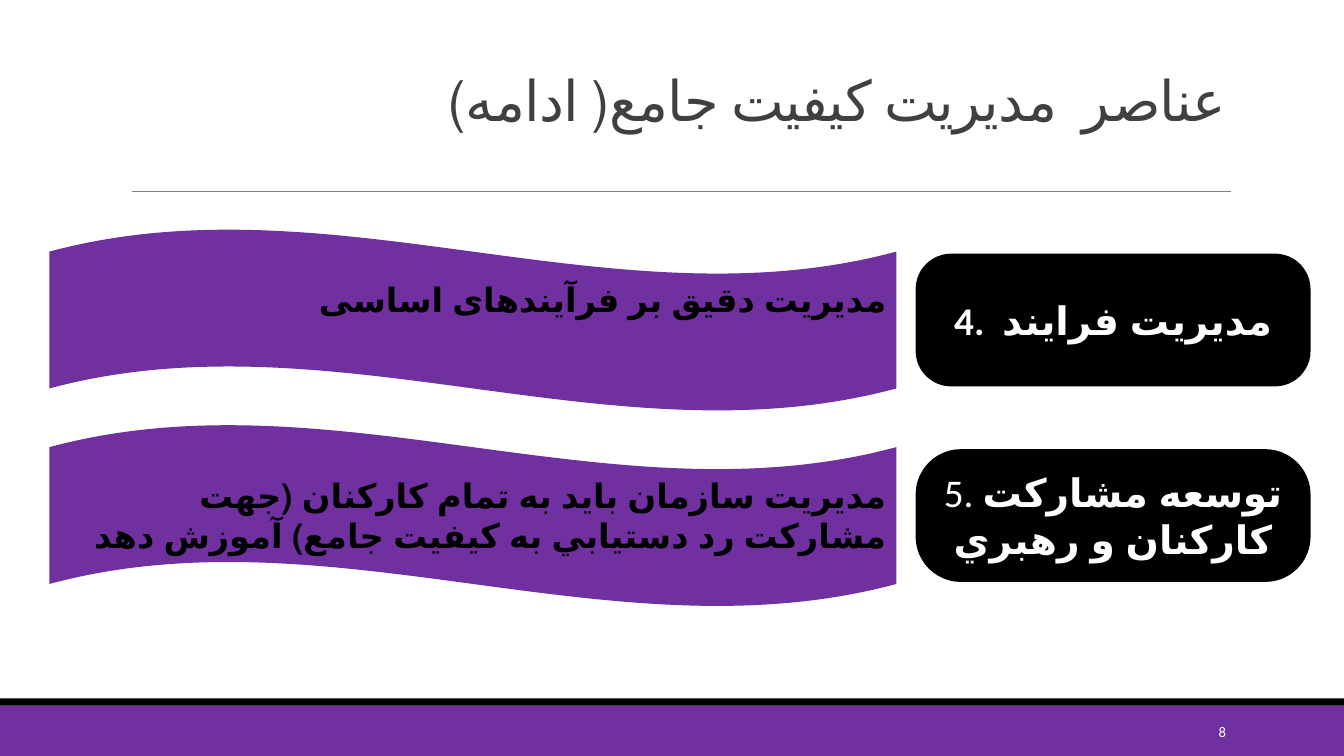
from lxml import etree
from pptx import Presentation
from pptx.dml.color import RGBColor
from pptx.enum.lang import MSO_LANGUAGE_ID
from pptx.enum.shapes import MSO_CONNECTOR, MSO_SHAPE
from pptx.enum.text import MSO_ANCHOR, MSO_AUTO_SIZE, PP_ALIGN
from pptx.oxml.ns import qn
from pptx.util import Inches, Pt

RECT, ROUND, WAVE = MSO_SHAPE.RECTANGLE, MSO_SHAPE.ROUNDED_RECTANGLE, MSO_SHAPE.WAVE
TOP, MIDDLE, BOTTOM = MSO_ANCHOR.TOP, MSO_ANCHOR.MIDDLE, MSO_ANCHOR.BOTTOM
CENTER, RIGHT = PP_ALIGN.CENTER, PP_ALIGN.RIGHT
PERSIAN = MSO_LANGUAGE_ID.FARSI

TITLE = "عناصر  مدیریت کیفیت جامع( ادامه)"
ROWS = [
    {"label": [("4.  مديريت فرايند", True)], "anchor": MIDDLE, "corner": 0.265,
     "detail": "مدیریت دقیق بر فرآیندهای اساسی"},
    {"label": [("5. ", False), ("توسعه مشاركت كاركنان و رهبري", True)],
     "anchor": TOP, "corner": 0.339,
     "detail": "مديريت سازمان بايد به تمام كاركنان (جهت مشاركت رد دستيابي "
               "به كيفيت جامع) آموزش دهد"},
]
PAGE = "8"
COLORS = {"purple": "7030A0", "black": "000000", "white": "FFFFFF",
          "title": "404040", "rule": "808080"}
FONT = "Calibri"
W, H = 13.33, 7.5
BAND, STRIPE = 0.5, 0.07
ROW_TOP, ROW_PITCH = 2.27, 1.94
WAVE_LEFT, WAVE_W, WAVE_H = 0.49, 8.4, 1.81
LABEL_LEFT, LABEL_W, LABEL_H = 9.09, 3.9, 1.3


def color(name):
    return RGBColor.from_string(COLORS[name])


def write(tf, runs, size, name, align, anchor):
    tf.word_wrap = True
    tf.auto_size = MSO_AUTO_SIZE.NONE
    tf.vertical_anchor = anchor
    p = tf.paragraphs[0]
    p.alignment = align
    for text, bold in runs:
        r = p.add_run()
        r.text = text
        r.font.name, r.font.size, r.font.bold = FONT, Pt(size), bold
        r.font.color.rgb = color(name)
        r.font.language_id = PERSIAN
    return p


def block(s, kind, box, fill, line=None):
    sp = s.shapes.add_shape(kind, *map(Inches, box))
    sp.shadow.inherit = False
    sp.fill.solid()
    sp.fill.fore_color.rgb = color(fill)
    if line:
        sp.line.color.rgb = color(fill)
        sp.line.width = Pt(line)
    else:
        sp.line.fill.background()
    return sp


def place(sp, left, top, width, height):
    sp.left, sp.top, sp.width, sp.height = map(Inches, (left, top, width, height))


def add_frame(s):
    block(s, RECT, (0, H - BAND, W, BAND), "purple")
    block(s, RECT, (0, H - BAND - STRIPE, W, STRIPE), "black")
    rule = s.shapes.add_connector(MSO_CONNECTOR.STRAIGHT, Inches(1.31), Inches(1.9),
                                  Inches(12.21), Inches(1.9))
    rule.line.color.rgb = color("rule")
    rule.line.width = Pt(0.5)
    etree.SubElement(rule._element.spPr, qn("a:effectLst"))


def add_title(s):
    title = s.shapes.title
    place(title, 3.95, 0.18, 8.31, 1.19)
    p = write(title.text_frame, [(TITLE, False)], 40, "title", RIGHT, BOTTOM)
    p.line_spacing = 0.85
    p._p.get_or_add_pPr().set("rtl", "1")
    p.runs[0].font._element.set("spc", "-50")


def add_row(s, i, row):
    top = ROW_TOP + i * ROW_PITCH
    label_top = top + (WAVE_H - LABEL_H) / 2
    label = block(s, ROUND, (LABEL_LEFT, label_top, LABEL_W, LABEL_H), "black", 1.25)
    label.adjustments[0] = row["corner"]
    write(label.text_frame, row["label"], 28, "white", CENTER, row["anchor"])
    wave = block(s, WAVE, (WAVE_LEFT, top, WAVE_W, WAVE_H), "purple")
    write(wave.text_frame, [(row["detail"], True)], 24, "black", RIGHT, TOP)


def main():
    prs = Presentation()
    prs.slide_width, prs.slide_height = Inches(W), Inches(H)
    s = prs.slides.add_slide(prs.slide_layouts[5])
    add_frame(s)
    add_title(s)
    number = s.shapes.add_textbox(Inches(10.83), Inches(7.06), Inches(1.43), Inches(0.4))
    write(number.text_frame, [(PAGE, False)], 10.5, "white", RIGHT, MIDDLE)
    for i, row in enumerate(ROWS):
        add_row(s, i, row)
    prs.save("out.pptx")


if __name__ == "__main__":
    main()
